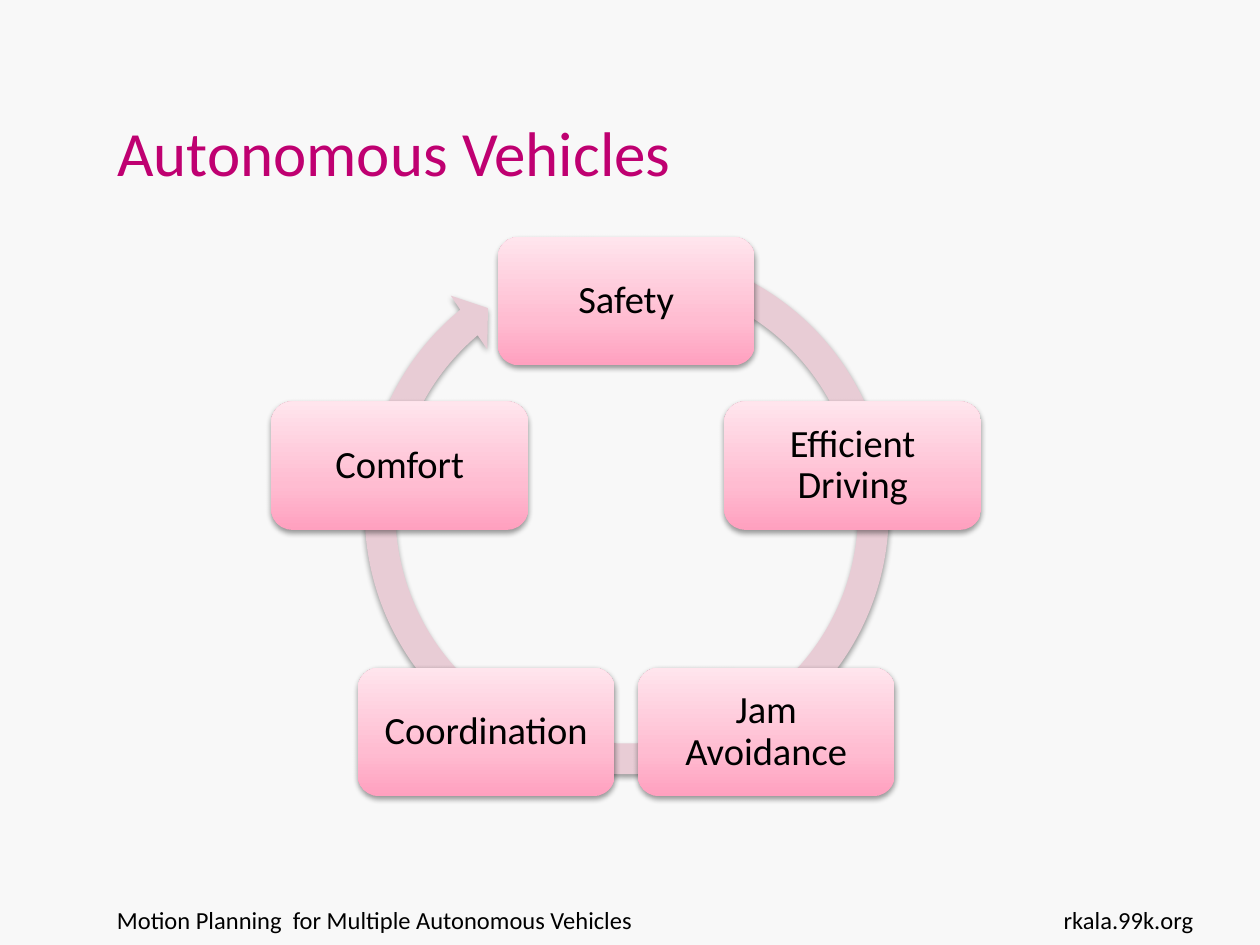
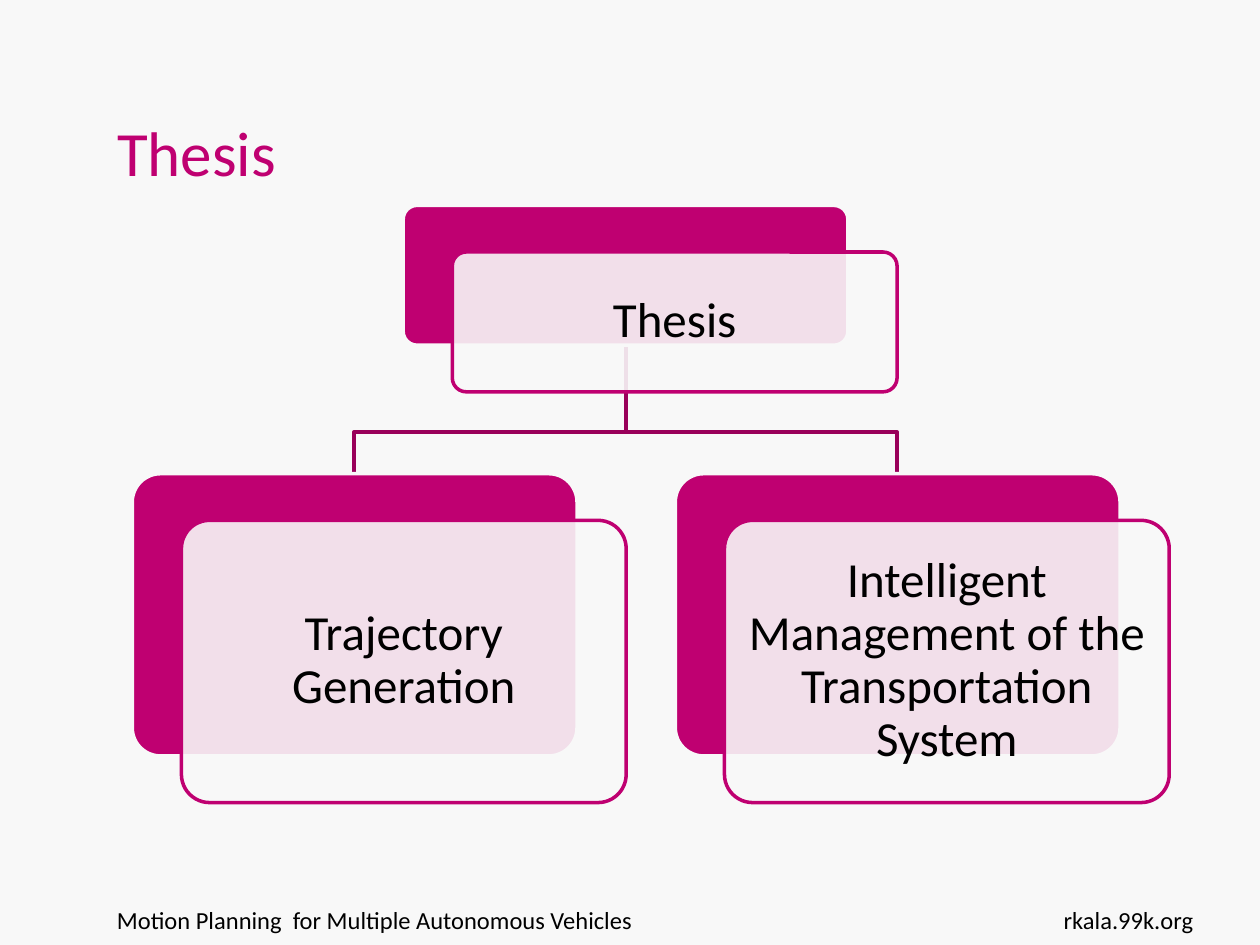
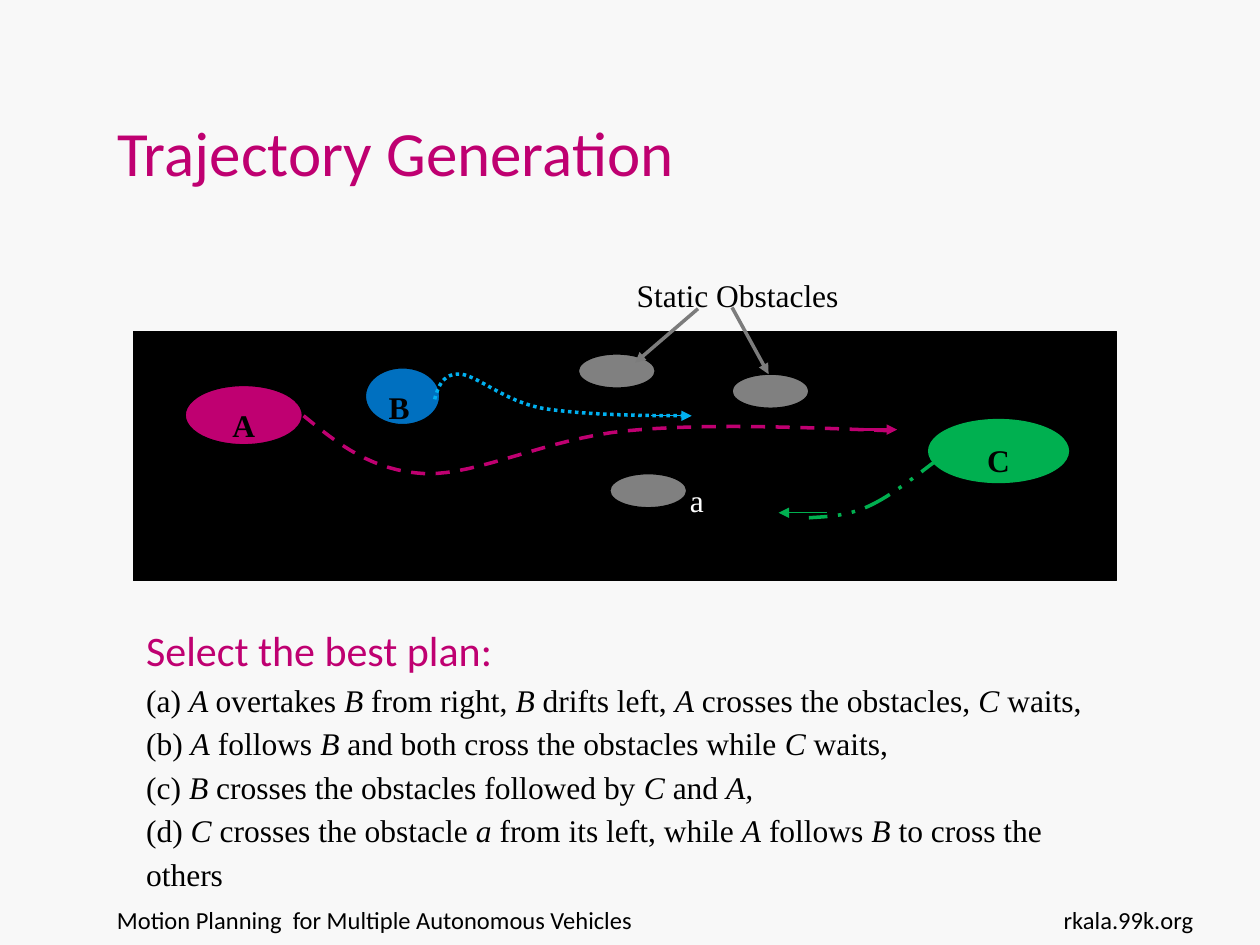
from copy import deepcopy
from math import cos, radians, sin

from pptx import Presentation
from pptx.dml.color import RGBColor
from pptx.enum.dml import MSO_LINE
from pptx.enum.shapes import MSO_CONNECTOR, MSO_SHAPE
from pptx.enum.text import MSO_ANCHOR, MSO_AUTO_SIZE, PP_ALIGN
from pptx.oxml import parse_xml
from pptx.oxml.ns import nsdecls, qn
from pptx.util import Inches, Pt

# Shared style
rgb = RGBColor.from_string
MAGENTA, DARK_MAGENTA, PAPER, BLACK = "BF0071", "99005A", "F8F8F8", "000000"
GRAY, BLUE, SKY, GREEN = "808080", "0070C0", "00B0F0", "00B050"
SANS, SERIF = "Calibri", "Times New Roman"
SHADOW = (
    f'<a:outerShdw {nsdecls("a")} blurRad="39400" dist="20300" dir="5400000" rotWithShape="0">'
    '<a:srgbClr val="000000"><a:alpha val="38000"/></a:srgbClr></a:outerShdw>'
)


def add_plain_shape(slide, kind, left, top, width, height, fill=None, line=None, line_width=0.75):
    shape = slide.shapes.add_shape(kind, Inches(left), Inches(top), Inches(width), Inches(height))
    shape.shadow.inherit = False
    if fill:
        shape.fill.solid()
        shape.fill.fore_color.rgb = rgb(fill)
    else:
        shape.fill.background()
    if line:
        shape.line.color.rgb = rgb(line)
        shape.line.width = Pt(line_width)
    else:
        shape.line.fill.background()
    return shape


def write(shape, text, size, color=BLACK, font=SANS, align=PP_ALIGN.LEFT,
          anchor=MSO_ANCHOR.TOP, spacing=1.0, inset=None, bold=False):
    frame = shape.text_frame
    frame.word_wrap = True
    frame.auto_size = MSO_AUTO_SIZE.NONE
    frame.vertical_anchor = anchor
    if inset:
        frame.margin_left = frame.margin_right = Inches(inset)
        frame.margin_top = frame.margin_bottom = Inches(inset)
    paragraph = frame.paragraphs[0]
    paragraph.text = text
    paragraph.alignment = align
    paragraph.line_spacing = spacing
    paragraph.font.size = Pt(size)
    paragraph.font.name = font
    paragraph.font.bold = bold
    paragraph.font.color.rgb = rgb(color)


presentation = Presentation()
presentation.slide_width, presentation.slide_height = Inches(10), Inches(7.5)
background = presentation.slide_master.background.fill
background.solid()
background.fore_color.rgb = rgb(PAPER)

# Titles and footers
slides = []
for heading, layout in [("Autonomous Vehicles", 5), ("Thesis", 5), ("Trajectory Generation", 1)]:
    slide = presentation.slides.add_slide(presentation.slide_layouts[layout])
    title = slide.shapes.title
    title.left, title.top, title.width, title.height = map(Inches, (0.83, 0.3, 6.77, 1.25))
    write(title, heading, 36, MAGENTA, anchor=MSO_ANCHOR.BOTTOM)
    for left, width, align, text in [
        (0.83, 6.93, PP_ALIGN.LEFT, "Motion Planning  for Multiple Autonomous Vehicles"),
        (8.07, 1.5, PP_ALIGN.RIGHT, "rkala.99k.org"),
    ]:
        footer = slide.shapes.add_textbox(Inches(left), Inches(7.13), Inches(width), Inches(0.52))
        write(footer, text, 14, align=align)
    slides.append(slide)
cycle_slide, thesis_slide, trajectory_slide = slides

# Slide 1: cycle of goals around a circular arrow
ring = add_plain_shape(cycle_slide, MSO_SHAPE.CIRCULAR_ARROW, 2.76, 1.85, 4.43, 4.43, "E8CCD5")
for index, value in enumerate((0.055, 3.307, 138.152, 173.621, 0.058)):
    ring.adjustments[index] = value
cycle_shapes = [ring]

center_x, center_y, radius = 4.97, 4.28, 1.89
node_width, node_height = 2.04, 1.02
goals = ["Safety", "Efficient Driving", "Jam Avoidance", "Coordination", "Comfort"]
for index, goal in enumerate(goals):
    angle = radians(index * 360 / len(goals))
    node = add_plain_shape(
        cycle_slide, MSO_SHAPE.ROUNDED_RECTANGLE,
        center_x + radius * sin(angle) - node_width / 2,
        center_y - radius * cos(angle) - node_height / 2, node_width, node_height)
    node.fill.gradient()
    node.fill.gradient_angle = 90
    stop_list = node.element.spPr.find(".//" + qn("a:gsLst"))
    stop_list.insert(1, deepcopy(stop_list[0]))
    colors = [(0, "FFA0BF"), (0.35, "FFBCD1"), (1, "FFE5ED")]
    for stop, (position, color) in zip(node.fill.gradient_stops, colors):
        stop.position = position
        stop.color.rgb = rgb(color)
    write(node, goal, 22, align=PP_ALIGN.CENTER, anchor=MSO_ANCHOR.MIDDLE, spacing=0.9, inset=0.09)
    cycle_shapes.append(node)
for shape in cycle_shapes:
    shape.element.spPr.find(qn("a:effectLst")).append(parse_xml(SHADOW))

# Slide 2: thesis tree, branches first and cards above them
card_width, root_x, root_bottom, fork_y, child_top = 3.53, 4.97, 2.73, 3.43, 3.76
for child_x in (7.12, 2.81):
    builder = thesis_slide.shapes.build_freeform(Inches(root_x), Inches(root_bottom), scale=1.0)
    corners = [(root_x, fork_y), (child_x, fork_y), (child_x, child_top)]
    builder.add_line_segments([(Inches(x), Inches(y)) for x, y in corners], close=False)
    branch = builder.convert_to_shape()
    branch.shadow.inherit = False
    branch.fill.background()
    branch.line.color.rgb = rgb(DARK_MAGENTA)
    branch.line.width = Pt(2)

for left, top, height, text in [
    (3.2, 1.63, 1.11, "Thesis"),
    (1.05, child_top, 2.24, "Trajectory Generation"),
    (5.36, child_top, 2.24, "Intelligent Management of the Transportation System"),
]:
    back = add_plain_shape(thesis_slide, MSO_SHAPE.ROUNDED_RECTANGLE,
                           left, top, card_width, height, MAGENTA, PAPER, 2)
    front = add_plain_shape(thesis_slide, MSO_SHAPE.ROUNDED_RECTANGLE,
                            left + 0.39, top + 0.37, card_width, height, PAPER, MAGENTA, 2)
    back.adjustments[0] = front.adjustments[0] = 0.1
    fill_color = front.element.spPr.find(qn("a:solidFill")).find(qn("a:srgbClr"))
    fill_color.append(parse_xml(f'<a:alpha {nsdecls("a")} val="90000"/>'))
    write(front, text, 28, align=PP_ALIGN.CENTER, anchor=MSO_ANCHOR.MIDDLE, spacing=0.9, inset=0.12)

# Slide 3: road with vehicles and obstacles
add_plain_shape(trajectory_slide, MSO_SHAPE.RECTANGLE, 1.06, 2.63, 7.8, 1.98, BLACK, BLACK)
for left, top in [(4.84, 3.76), (5.81, 2.97), (4.59, 2.81)]:
    add_plain_shape(trajectory_slide, MSO_SHAPE.OVAL, left, top, 0.61, 0.27, GRAY, BLACK)
for name, left, top, width, height, fill, line, color, align in [
    ("A", 1.47, 3.06, 0.93, 0.47, MAGENTA, BLACK, BLACK, PP_ALIGN.CENTER),
    ("B", 2.9, 2.92, 0.59, 0.45, BLUE, BLACK, BLACK, PP_ALIGN.LEFT),
    ("C", 7.37, 3.33, 1.11, 0.5, GREEN, GREEN, BLACK, PP_ALIGN.CENTER),
    ("a", 5.29, 3.66, 0.59, 0.45, None, None, "FFFFFF", PP_ALIGN.LEFT),
]:
    oval = add_plain_shape(trajectory_slide, MSO_SHAPE.OVAL, left, top, width, height, fill, line)
    write(oval, name, 18, color, SERIF, align, spacing=1.15, bold=name.isupper())
caption = trajectory_slide.shapes.add_textbox(Inches(4.59), Inches(2.1), Inches(2.53), Inches(0.45))
write(caption, "Static Obstacles", 18, font=SERIF, align=PP_ALIGN.CENTER, spacing=1.15)

# Dashed trajectories: Bezier curves, each a start and triples of control points
STEPS = 16
for color, dash, points in [
    (MAGENTA, MSO_LINE.DASH,
     [(2.41, 3.3), (2.68, 3.52), (2.95, 3.74), (3.38, 3.76), (3.8, 3.77),
      (4.35, 3.48), (4.97, 3.42), (5.59, 3.36), (6.33, 3.39), (7.08, 3.42)]),
    (SKY, MSO_LINE.ROUND_DOT,
     [(3.45, 3.17), (3.48, 3.06), (3.52, 2.96), (3.66, 2.97), (3.8, 2.99),
      (4, 3.18), (4.3, 3.24), (4.6, 3.29), (5.03, 3.3), (5.45, 3.3)]),
    (GREEN, MSO_LINE.DASH_DOT_DOT,
     [(7.49, 3.61), (7.28, 3.77), (7.07, 3.94), (6.89, 4.02),
      (6.71, 4.1), (6.56, 4.1), (6.42, 4.11)]),
]:
    curve = []
    for first in range(0, len(points) - 1, 3):
        for step in range(1, STEPS + 1):
            t = step / STEPS
            weights = ((1 - t) ** 3, 3 * t * (1 - t) ** 2, 3 * t ** 2 * (1 - t), t ** 3)
            curve.append([
                Inches(sum(w * point[axis] for w, point in zip(weights, points[first:first + 4])))
                for axis in (0, 1)])
    start_x, start_y = points[0]
    builder = trajectory_slide.shapes.build_freeform(Inches(start_x), Inches(start_y), scale=1.0)
    builder.add_line_segments(curve, close=False)
    trajectory = builder.convert_to_shape()
    trajectory.shadow.inherit = False
    trajectory.fill.background()
    trajectory.line.color.rgb = rgb(color)
    trajectory.line.width = Pt(2)
    trajectory.line.dash_style = dash

# Arrows to the obstacles and at the ends of the trajectories
for start_x, start_y, end_x, end_y, color, width in [
    (5.54, 2.45, 5.04, 2.88, "7C7C7C", 2),
    (5.81, 2.44, 6.1, 2.97, "7C7C7C", 2),
    (6.56, 4.07, 6.18, 4.07, GREEN, 0.75),
    (6.8, 3.41, 7.12, 3.41, MAGENTA, 2),
    (5.17, 3.3, 5.49, 3.3, SKY, 0.75),
]:
    arrow = trajectory_slide.shapes.add_connector(
        MSO_CONNECTOR.STRAIGHT, Inches(start_x), Inches(start_y), Inches(end_x), Inches(end_y))
    arrow.line.color.rgb = rgb(color)
    arrow.line.width = Pt(width)
    properties = arrow.element.spPr
    properties.find(qn("a:ln")).append(parse_xml(f'<a:tailEnd {nsdecls("a")} type="triangle"/>'))
    properties.append(parse_xml(f'<a:effectLst {nsdecls("a")}/>'))

# Plans to choose from; asterisks enclose italic names
plans = [
    "(a) *A *overtakes *B* from right, *B* drifts left, *A* crosses the obstacles, *C* waits, "
    "(b) *A* follows *B* and both cross the obstacles while *C* waits,",
    "(c) *B* crosses the obstacles followed by *C* and *A,*",
    "(d) *C* crosses the obstacle *a* from its left, while *A* follows *B* to cross the others",
]
body = trajectory_slide.placeholders[1]
body.left, body.top, body.width, body.height = map(Inches, (1.06, 4.85, 7.8, 2.21))
write(body, "Select the best plan:", 24, MAGENTA, spacing=1.15)
for plan in plans:
    paragraph = body.text_frame.add_paragraph()
    paragraph.line_spacing = 1.15
    paragraph.font.size = Pt(18)
    paragraph.font.name = SERIF
    paragraph.font.color.rgb = rgb(BLACK)
    for index, part in enumerate(plan.split("*")):
        if part:
            run = paragraph.add_run()
            run.text = part
            run.font.italic = index % 2 == 1
for paragraph in body.text_frame.paragraphs:
    paragraph.space_before = Pt(0)
    properties = paragraph._p.get_or_add_pPr()
    properties.set("marL", "0")
    properties.set("indent", "0")
    bullet = parse_xml(f'<a:buNone {nsdecls("a")}/>')
    properties.find(qn("a:defRPr")).addprevious(bullet)

presentation.save("out.pptx")
